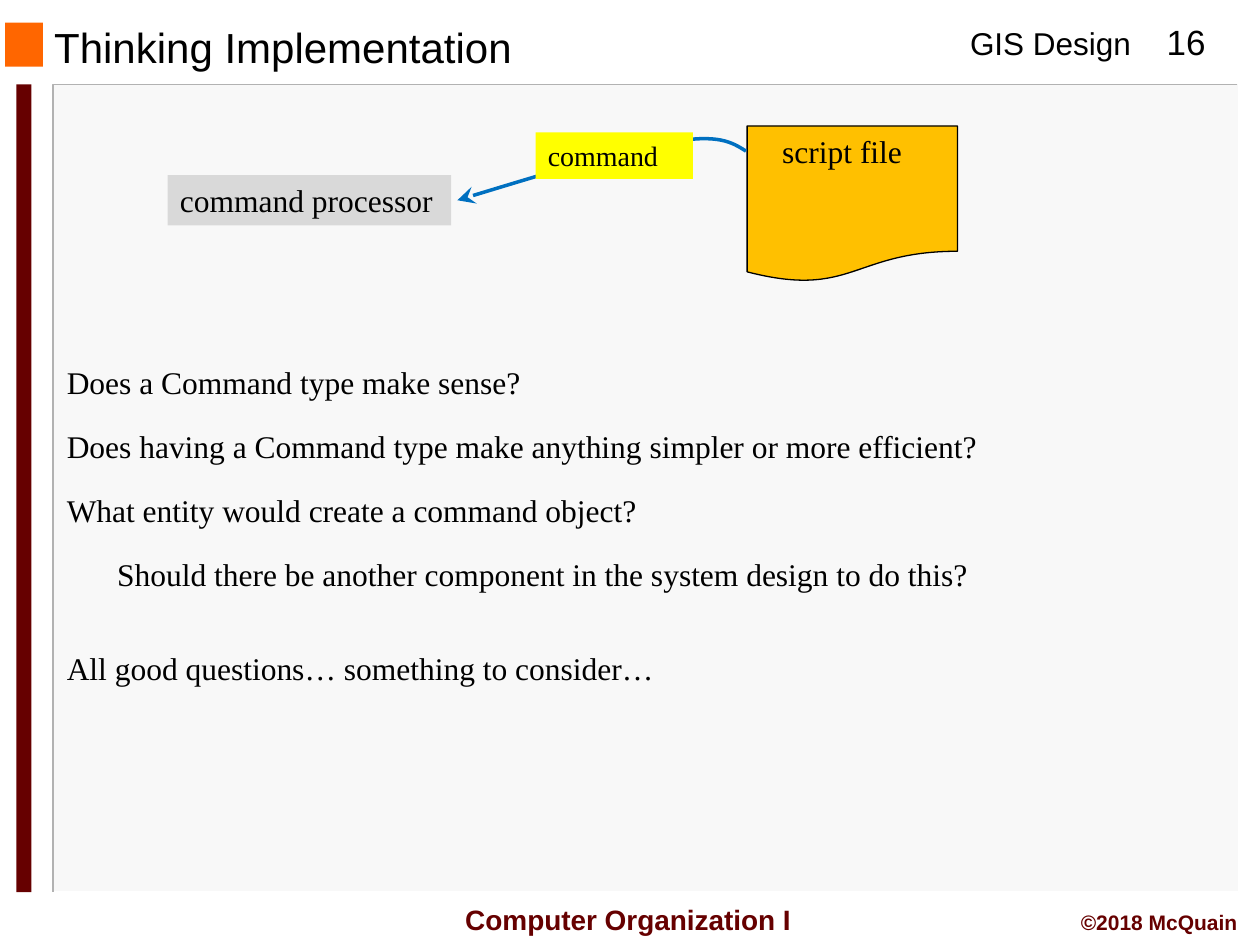
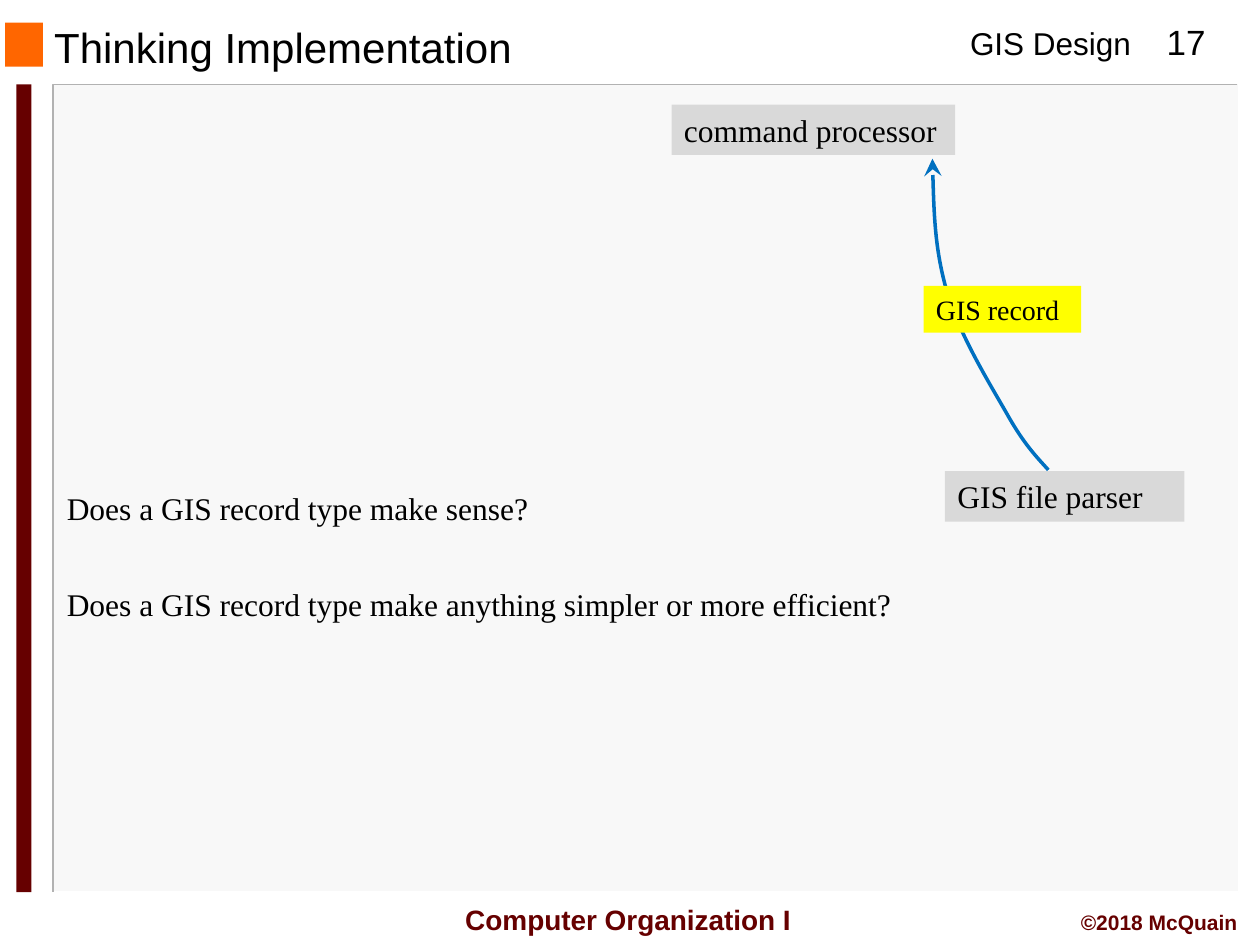
from dataclasses import dataclass

from lxml.etree import SubElement
from pptx import Presentation
from pptx.dml.color import RGBColor
from pptx.enum.shapes import MSO_SHAPE
from pptx.enum.text import MSO_ANCHOR, MSO_AUTO_SIZE, PP_ALIGN
from pptx.oxml.ns import qn
from pptx.util import Inches, Pt


@dataclass(frozen=True)
class Theme:
    sans: str = "Arial"
    serif: str = "Times New Roman"
    black: str = "000000"
    white: str = "FFFFFF"
    maroon: str = "660000"
    orange: str = "FF6600"
    panel: str = "F8F8F8"
    edge: str = "B2B2B2"
    component: str = "D9D9D9"
    document: str = "FFC000"
    message: str = "FFFF00"
    flow: str = "0070C0"
    title_size: int = 24
    number_size: int = 20
    body_size: int = 18
    label_size: int = 16
    credit_size: int = 12


T = Theme()
TITLE_BOX = (0.33, 0.18, 6.33, 0.38)
NUMBER_BOX = (9.08, 0.11, 0.67, 0.43)
PANEL_BOX = (0.43, 0.67, 9.4, 6.41)


def rgb(color):
    return RGBColor.from_string(color)


def place(sp, box):
    sp.left, sp.top, sp.width, sp.height = map(Inches, box)


def write(p, text, *, size=T.body_size, font=T.serif, color=T.black, bold=False):
    r = p.add_run()
    r.text = text
    r.font.size, r.font.name, r.font.bold = Pt(size), font, bold
    r.font.color.rgb = rgb(color)


def set_frame(tf, *, anchor=MSO_ANCHOR.TOP, wrap=True):
    tf.word_wrap, tf.auto_size, tf.vertical_anchor = wrap, MSO_AUTO_SIZE.NONE, anchor


def add_text(slide, box, text, *, align=PP_ALIGN.LEFT, anchor=MSO_ANCHOR.TOP,
             wrap=True, **font):
    tf = slide.shapes.add_textbox(*map(Inches, box)).text_frame
    set_frame(tf, anchor=anchor, wrap=wrap)
    p = tf.paragraphs[0]
    p.alignment = align
    write(p, text, **font)


def add_block(slide, box, fill, *, shape=MSO_SHAPE.RECTANGLE, line=None, text=None,
              **font):
    sp = slide.shapes.add_shape(shape, *map(Inches, box))
    sp.shadow.inherit = False
    sp.fill.solid()
    sp.fill.fore_color.rgb = rgb(fill)
    if line:
        sp.line.color.rgb = rgb(line)
        sp.line.width = Pt(0.75)
    else:
        sp.line.fill.background()
    if text:
        set_frame(sp.text_frame)
        p = sp.text_frame.paragraphs[0]
        p.alignment = PP_ALIGN.LEFT
        write(p, text, **font)


def add_path(slide, points, color, width):
    (x, y), *rest = [(Inches(px), Inches(py)) for px, py in points]
    builder = slide.shapes.build_freeform(x, y)
    builder.add_line_segments(rest, close=False)
    sp = builder.convert_to_shape()
    sp.shadow.inherit = False
    sp.fill.background()
    sp.line.color.rgb = rgb(color)
    sp.line.width = Pt(width)
    return sp


def add_curved_arrow(slide, x, y, points):
    """Draw Bézier segments (three points each after the start) with an arrowhead."""
    sp = add_path(slide, [(x + dx, y + dy) for dx, dy in points], T.flow, 2)
    steps = sp.element.xpath(".//a:lnTo")
    for i in range(0, len(steps), 3):
        first, *others = steps[i:i + 3]
        first.tag = qn("a:cubicBezTo")
        for step in others:
            first.append(step[0])
            step.getparent().remove(step)
    ln = sp.element.xpath("./p:spPr/a:ln")[0]
    SubElement(ln, qn("a:tailEnd"), type="stealth", w="lg", len="lg")


def add_component(slide, box, text):
    add_block(slide, box, T.component, text=text)


def add_message(slide, x, y, text):
    add_block(slide, (x, y, 1.25, 0.37), T.message, text=text, size=T.label_size)


def draw_panel(slide, box):
    x, y, w, h = box
    right, bottom = x + w, y + h
    add_block(slide, box, T.panel)
    add_path(slide, [(right - 0.01, y), (x - 0.01, y), (x - 0.01, bottom)], T.edge, 1)
    add_path(slide, [(right, y), (right, bottom), (x, bottom)], T.white, 1)
    add_block(slide, (x - 0.3, y, 0.12, h), T.maroon)


def draw_footer(slide, x, y, right):
    style = {"font": T.sans, "bold": True, "color": T.maroon}
    add_text(slide, (x, y, 2.95, 0.37), " Computer Organization I",
             align=PP_ALIGN.CENTER, anchor=MSO_ANCHOR.MIDDLE, wrap=False,
             size=T.label_size, **style)
    add_text(slide, (right - 2.92, y + 0.06, 2.92, 0.3), "©2018 McQuain",
             align=PP_ALIGN.RIGHT, size=T.credit_size, **style)


def dress_layout(prs, layout):
    """Draw the shared frame on a new slide, move it to the layout, return the slide."""
    slide = prs.slides.add_slide(layout)
    draw_panel(slide, PANEL_BOX)
    add_block(slide, (0.04, 0.18, 0.3, 0.35), T.orange)
    add_text(slide, (7.6, 0.14, 1.49, 0.4), "GIS Design", wrap=False, font=T.sans)
    draw_footer(slide, 3.48, 7.11, 9.92)
    parts = [sp.element for sp in slide.shapes if not sp.is_placeholder]
    for i, part in enumerate(parts):
        part.xpath("./*/p:cNvPr")[0].set("id", str(100 + i))
        layout.shapes.element.insert(2 + i, part)
    return slide


def fill_title(slide, number):
    sp = slide.shapes.title
    place(sp, TITLE_BOX)
    set_frame(sp.text_frame, anchor=MSO_ANCHOR.MIDDLE)
    p = sp.text_frame.paragraphs[0]
    p.alignment = PP_ALIGN.LEFT
    write(p, "Thinking Implementation", size=T.title_size, font=T.sans)
    add_text(slide, NUMBER_BOX, str(number), align=PP_ALIGN.CENTER,
             size=T.number_size, font=T.sans)


def fill_questions(slide, box, questions):
    """Fill the body with (text, points before, left indent in inches) rows."""
    sp = slide.placeholders[1]
    place(sp, box)
    tf = sp.text_frame
    set_frame(tf)
    for i, (text, before, indent) in enumerate(questions):
        p = tf.add_paragraph() if i else tf.paragraphs[0]
        p.space_before = Pt(before)
        pPr = p._p.get_or_add_pPr()
        pPr.set("marL", str(Inches(indent)))
        pPr.set("indent", "0")
        SubElement(pPr, qn("a:buNone"))
        write(p, text)


def draw_command_flow(slide, x, y):
    add_component(slide, (x, y + 0.39, 2.25, 0.4), "command processor")
    add_block(slide, (x + 4.6, y, 1.67, 1.24), T.document,
              shape=MSO_SHAPE.FLOWCHART_DOCUMENT, line=T.black)
    add_text(slide, (x + 4.78, y, 1.31, 0.45), "script file")
    add_curved_arrow(slide, x, y, [
        (4.59, 0.2), (4.48, 0.13), (4.37, 0.06), (3.99, 0.13),
        (3.61, 0.19), (2.96, 0.39), (2.3, 0.59)])
    add_message(slide, x + 2.92, y + 0.05, "command")


def draw_record_flow(slide, x, y):
    add_component(slide, (x + 2.17, y + 2.91, 1.9, 0.4), "GIS file parser")
    add_component(slide, (x, y, 2.25, 0.4), "command processor")
    add_curved_arrow(slide, x, y, [
        (2.99, 2.9), (2.9, 2.8), (2.8, 2.7), (2.67, 2.47), (2.54, 2.24),
        (2.29, 1.84), (2.19, 1.5), (2.09, 1.16), (2.08, 0.8), (2.07, 0.43)])
    add_message(slide, x + 2, y + 1.44, "GIS record")


def build_command_slide(slide):
    fill_title(slide, 16)
    fill_questions(slide, (0.43, 2.83, 9.17, 2.67), [
        ("Does a Command type make sense?", 0, 0),
        ("Does having a Command type make anything simpler or more efficient?", 14.9, 0),
        ("What entity would create a command object?", 14.9, 0),
        ("Should there be another component in the system design to do this?", 14.9, 0.4),
        ("All good questions… something to consider…", 32.2, 0)])
    draw_command_flow(slide, 1.33, 1)


def build_record_slide(slide):
    fill_title(slide, 17)
    fill_questions(slide, (0.43, 3.83, 6.83, 1.17), [
        ("Does a GIS record type make sense?", 0, 0),
        ("Does a GIS record type make anything simpler or more efficient?", 33.2, 0)])
    draw_record_flow(slide, 5.33, 0.83)


def main():
    prs = Presentation()
    prs.slide_width, prs.slide_height = Inches(10), Inches(7.5)
    layout = prs.slide_layouts[1]
    build_command_slide(dress_layout(prs, layout))
    build_record_slide(prs.slides.add_slide(layout))
    prs.save("out.pptx")


if __name__ == "__main__":
    main()
